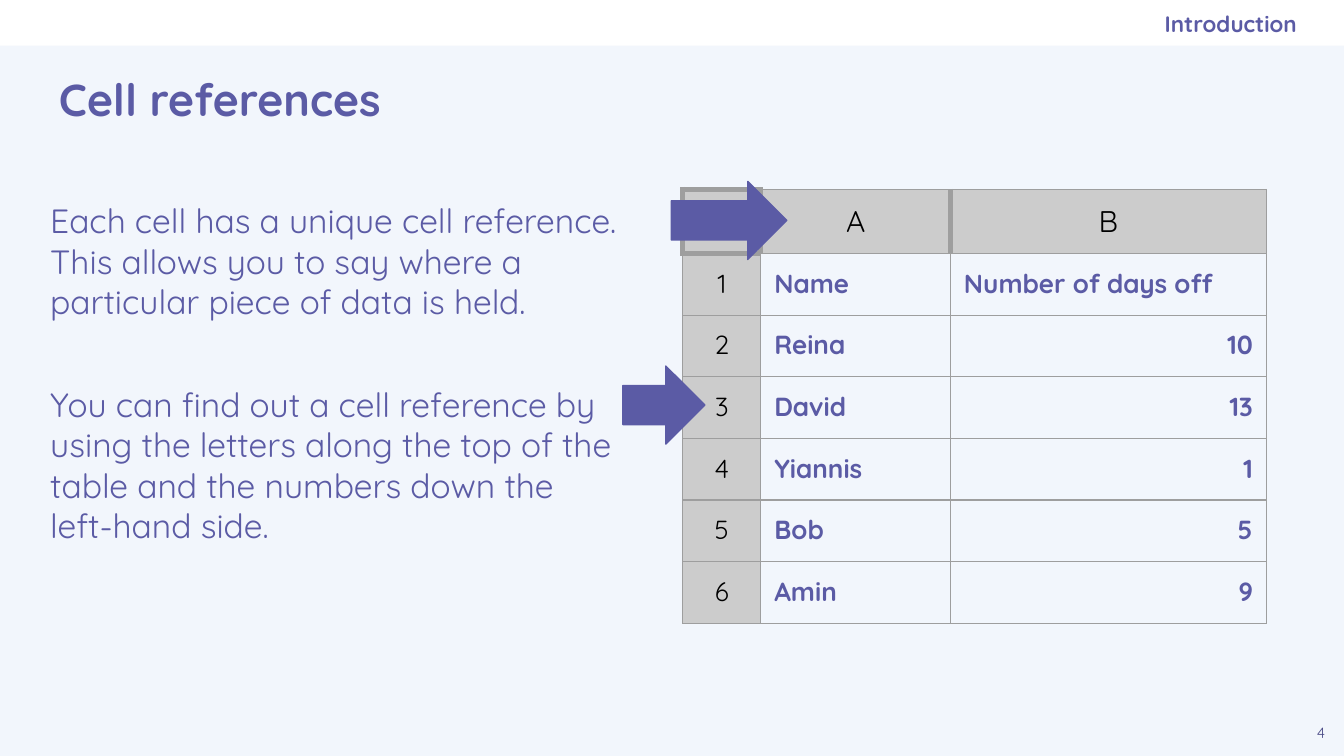
from lxml import etree
from pptx import Presentation
from pptx.dml.color import RGBColor
from pptx.enum import shapes, text
from pptx.oxml import ns
from pptx.util import Pt

# Content
SECTION = "Introduction"
TITLE = "Cell references"
PAGE = "4"
BODY = [
    "Each cell has a unique cell reference. This allows you to say where a "
    "particular piece of data is held.",
    "You can find out a cell reference by using the letters along the top of "
    "the table and the numbers down the left-hand side.",
]
LETTERS = ["A", "B"]
RECORDS = [
    ("Name", "Number of days off"),
    ("Reina", "10"),
    ("David", "13"),
    ("Yiannis", "1"),
    ("Bob", "5"),
    ("Amin", "9"),
]

# Look
FONT = "Quicksand"
COLORS = {
    "background": "F2F6FC",
    "band": "FFFFFF",
    "accent": "5B5BA5",
    "page": "494985",
    "header": "CCCCCC",
    "border": "9E9E9E",
    "label": "000000",
}
INSET = 7.2
THIN, THICK = 0.75, 3

# Layout, in points
WIDTH, HEIGHT = 720, 405
BAND_HEIGHT = 24.5
TABLE_LEFT, TABLE_TOP = 365.8, 101.5
COLUMN_WIDTHS = [41.8, 101.6, 169.2]
HEADER_HEIGHT, ROW_HEIGHT = 34.4, 33
ARROWS = [(333.7, 196.1, 43.9, 41.8), (359.6, 97.2, 61.9, 41.8)]

LEFT, CENTER, RIGHT = (text.PP_ALIGN.LEFT, text.PP_ALIGN.CENTER,
                       text.PP_ALIGN.RIGHT)


def color(name):
    return RGBColor.from_string(COLORS[name])


def format_text(text_frame, size, color_name, bold=False, align=LEFT):
    for paragraph in text_frame.paragraphs:
        paragraph.alignment = align
        for run in paragraph.runs:
            run.font.name = FONT
            run.font.size = Pt(size)
            run.font.bold = bold
            run.font.color.rgb = color(color_name)


def add_text(slide, box, content, size, color_name, bold=False, align=LEFT,
             anchor=text.MSO_ANCHOR.TOP, right_inset=INSET, bottom_inset=INSET):
    frame = slide.shapes.add_textbox(*map(Pt, box)).text_frame
    frame.word_wrap = True
    frame.vertical_anchor = anchor
    frame.margin_left = frame.margin_top = Pt(INSET)
    frame.margin_right, frame.margin_bottom = Pt(right_inset), Pt(bottom_inset)
    frame.text = content
    format_text(frame, size, color_name, bold, align)
    return frame


def add_shape(slide, kind, box, color_name, outlined=False):
    shape = slide.shapes.add_shape(kind, *map(Pt, box))
    shape.shadow.inherit = False
    shape.fill.solid()
    shape.fill.fore_color.rgb = color(color_name)
    if outlined:
        shape.line.color.rgb = color(color_name)
        shape.line.width = Pt(THIN)
    else:
        shape.line.fill.background()
    return shape


def set_borders(cell, thick_sides):
    properties = cell._tc.get_or_add_tcPr()
    for side in "LRTB":
        width = THICK if side in thick_sides else THIN
        line = etree.SubElement(properties, ns.qn(f"a:ln{side}"), w=str(Pt(width)))
        fill = etree.SubElement(line, ns.qn("a:solidFill"))
        etree.SubElement(fill, ns.qn("a:srgbClr"), val=COLORS["border"])


def fill_cell(cell, row, column, content):
    # Heavy lines surround the corner and separate the column letters
    thick_sides = {(0, 0): "LRTB", (0, 1): "LR", (0, 2): "L", (1, 0): "T"}
    set_borders(cell, thick_sides.get((row, column), ""))
    is_header = row == 0 or column == 0
    if is_header:
        cell.fill.solid()
        cell.fill.fore_color.rgb = color("header")
        align = CENTER
    else:
        cell.fill.background()
        align = RIGHT if content.isdigit() else LEFT
    cell.margin_left = cell.margin_right = Pt(INSET)
    cell.margin_top = cell.margin_bottom = Pt(INSET)
    if not content:
        # A small size keeps the empty corner from stretching its row
        paragraph = cell.text_frame.paragraphs[0]
        etree.SubElement(paragraph._p, ns.qn("a:endParaRPr"), sz="1400")
        return
    cell.text_frame.text = content
    format_text(cell.text_frame, 16 if row == 0 else 14,
                "label" if is_header else "accent", not is_header, align)


def add_spreadsheet(slide):
    rows = [("", *LETTERS)]
    rows += [(str(number), *record) for number, record in enumerate(RECORDS, 1)]
    heights = [HEADER_HEIGHT] + [ROW_HEIGHT] * len(RECORDS)
    table = slide.shapes.add_table(
        len(rows), len(COLUMN_WIDTHS), Pt(TABLE_LEFT), Pt(TABLE_TOP),
        Pt(sum(COLUMN_WIDTHS)), Pt(sum(heights))).table
    table.first_row = table.horz_banding = False
    for column, width in zip(table.columns, COLUMN_WIDTHS):
        column.width = Pt(width)
    for row, (contents, height) in enumerate(zip(rows, heights)):
        table.rows[row].height = Pt(height)
        for column, content in enumerate(contents):
            fill_cell(table.cell(row, column), row, column, content)


def main():
    presentation = Presentation()
    presentation.slide_width, presentation.slide_height = Pt(WIDTH), Pt(HEIGHT)
    slide = presentation.slides.add_slide(presentation.slide_layouts[6])
    slide.background.fill.solid()
    slide.background.fill.fore_color.rgb = color("background")

    # Top band and table
    add_shape(slide, shapes.MSO_SHAPE.RECTANGLE, (0, 0, WIDTH, BAND_HEIGHT), "band")
    add_spreadsheet(slide)

    # Explanation
    body = add_text(slide, (19.8, 100.1, 322.6, 267.8), "\n".join(BODY), 18, "accent",
                    right_inset=10)
    for paragraph in body.paragraphs:
        paragraph.line_spacing = Pt(21.6)
    body.paragraphs[1].space_before = Pt(33.6)

    # Title, page number and section name
    add_text(slide, (24.5, 25.6, 671, 54.7), TITLE, 24, "accent", bold=True,
             anchor=text.MSO_ANCHOR.MIDDLE)
    add_text(slide, (695.5, 380.5, 24.5, 24.5), PAGE, 8, "page", align=CENTER,
             bottom_inset=0)
    add_text(slide, (414, 0.4, 280.8, BAND_HEIGHT), SECTION, 12, "accent", bold=True,
             align=RIGHT, anchor=text.MSO_ANCHOR.MIDDLE, right_inset=0)

    # Arrows to the row numbers and column letters
    for box in ARROWS:
        add_shape(slide, shapes.MSO_SHAPE.RIGHT_ARROW, box, "accent", outlined=True)

    presentation.save("out.pptx")


if __name__ == "__main__":
    main()
